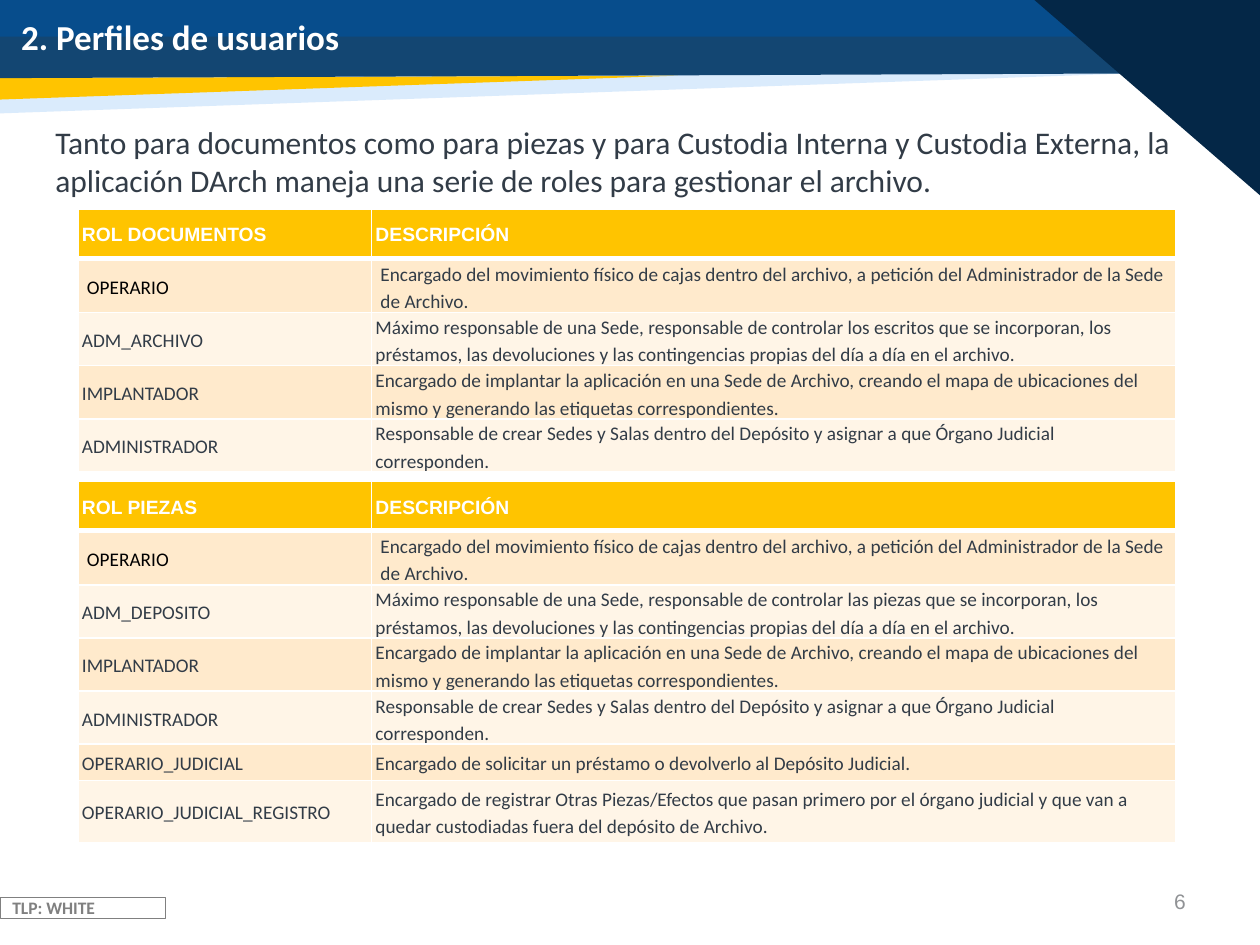
import dataclasses
import typing

import pptx
import pptx.dml.color
import pptx.enum.shapes
import pptx.enum.text
import pptx.oxml
import pptx.oxml.ns
import pptx.util
from pptx.util import Inches, Pt

ALIGN = pptx.enum.text.PP_ALIGN
MIDDLE = pptx.enum.text.MSO_ANCHOR.MIDDLE
WHITE, GOLD, INK, GREY = "FFFFFF", "FFC400", "323C47", "808080"
BANDS = ("FFEACC", "FFF5E7")
Point = tuple[float, float]


@dataclasses.dataclass
class Font:
    size: float
    color: str
    bold: bool = False
    name: str = "Calibri"


@dataclasses.dataclass
class Outline:
    points: list[Point]
    color: str
    alpha: int = 100


@dataclasses.dataclass
class Label:
    box: tuple[float, float, float, float]
    text: str
    font: Font
    align: typing.Any = ALIGN.LEFT
    anchor: typing.Any = pptx.enum.text.MSO_ANCHOR.TOP


@dataclasses.dataclass
class Role:
    name: str
    task: str
    height: float


@dataclasses.dataclass
class Grid:
    title: str
    top: float
    align: typing.Any
    roles: list[Role]


HEAD = Font(11, WHITE, True, "Arial")
BODY = Font(11, INK)
FIRST = Font(11, "000000")

BANNER = [
    Outline([(0, 0.62), (9.05, 0.58), (0, 0.9)], "CDE4FB", 72),
    Outline([(5.38, 0.6), (0, 0.79), (0, 0.62)], GOLD),
    Outline([(0, 0), (9.84, 0), (9.75, 0.58), (0, 0.62)], "053B6A", 94),
    Outline([(9.84, 0), (9.8, 0.29), (0, 0.29), (0, 0)], "074E8E", 94),
    Outline([(8.21, 0), (10, 0), (10, 1.55)], "042747"),
]

LABELS = [
    Label((0, 7.07, 1.31, 0.27), "TLP: WHITE", Font(10, GREY, True)),
    Label((0.07, 0, 9.7, 0.58), "2. Perfiles de usuarios",
          Font(20, WHITE, True), anchor=MIDDLE),
    Label((6.98, 6.95, 2.53, 0.4), "6", Font(12, "909295", name="Arial"),
          ALIGN.RIGHT, MIDDLE),
    Label((0.34, 0.93, 9.15, 0.71),
          "Tanto para documentos como para piezas y para Custodia Interna y Custodia "
          "Externa, la aplicación DArch maneja una serie de roles para gestionar el "
          "archivo.", Font(18, INK)),
]

WORKER = Role("OPERARIO", "Encargado del movimiento físico de cajas dentro del archivo, "
              "a petición del Administrador de la Sede de Archivo.", 0.29)
SETUP = Role("IMPLANTADOR", "Encargado de implantar la aplicación en una Sede de Archivo, "
             "creando el mapa de ubicaciones del mismo y generando las etiquetas "
             "correspondientes.", 0.39)
ADMIN = Role("ADMINISTRADOR", "Responsable de crear Sedes y Salas dentro del Depósito y "
             "asignar a que Órgano Judicial corresponden.", 0.38)


def manager(name: str, items: str, height: float) -> Role:
    return Role(name, f"Máximo responsable de una Sede, responsable de controlar {items} "
                "que se incorporan, los préstamos, las devoluciones y las contingencias "
                "propias del día a día en el archivo.", height)


GRIDS = [
    Grid("ROL DOCUMENTOS", 1.66, ALIGN.JUSTIFY, [
        WORKER, manager("ADM_ARCHIVO", "los escritos", 0.42), SETUP, ADMIN]),
    Grid("ROL PIEZAS", 3.82, ALIGN.LEFT, [
        WORKER, manager("ADM_DEPOSITO", "las piezas", 0.37), SETUP, ADMIN,
        Role("OPERARIO_JUDICIAL", "Encargado de solicitar un préstamo o devolverlo al "
             "Depósito Judicial.", 0.29),
        Role("OPERARIO_JUDICIAL_REGISTRO", "Encargado de registrar Otras Piezas/Efectos "
             "que pasan primero por el órgano judicial y que van a quedar custodiadas "
             "fuera del depósito de Archivo.", 0.49)]),
]


def paint(fill, color: str) -> None:
    fill.solid()
    fill.fore_color.rgb = pptx.dml.color.RGBColor.from_string(color)


def write(frame, text: str, font: Font, align):
    para = frame.paragraphs[0]
    para.alignment = align
    run = para.add_run()
    run.text = text
    run.font.name = font.name
    run.font.size = Pt(font.size)
    run.font.bold = font.bold
    paint(run.font.fill, font.color)
    return para


def draw_shape(slide, outline: Outline) -> None:
    first, *rest = [(Inches(x), Inches(y)) for x, y in outline.points]
    pen = slide.shapes.build_freeform(*first)
    pen.add_line_segments(rest)
    shape = pen.convert_to_shape()
    shape.shadow.inherit = False
    shape.line.fill.background()
    paint(shape.fill, outline.color)
    if outline.alpha < 100:
        tone = shape.fill._xPr.find(".//" + pptx.oxml.ns.qn("a:srgbClr"))
        tone.append(pptx.oxml.parse_xml(
            f'<a:alpha {pptx.oxml.ns.nsdecls("a")} val="{outline.alpha * 1000}"/>'))


def draw_frame(slide) -> None:
    """Draw the outlined box behind the TLP mark."""
    shape = slide.shapes.add_shape(pptx.enum.shapes.MSO_SHAPE.RECTANGLE,
                                   Inches(0), Inches(7.12), Inches(1.31), Inches(0.17))
    shape.shadow.inherit = False
    paint(shape.fill, WHITE)
    paint(shape.line.fill, GREY)
    shape.line.width = Pt(0.25)


def draw_label(slide, label: Label) -> None:
    frame = slide.shapes.add_textbox(*map(Inches, label.box)).text_frame
    frame.word_wrap = True
    frame.vertical_anchor = label.anchor
    write(frame, label.text, label.font, label.align)


def draw_cell(cell, text: str, font: Font, align, fill: str, row: int) -> None:
    props = cell._tc.get_or_add_tcPr()
    widths = {"L": 1, "R": 1, "T": 3 if row == 1 else 1, "B": 3 if row == 0 else 1}
    for side, width in widths.items():
        props.append(pptx.oxml.parse_xml(
            f'<a:ln{side} {pptx.oxml.ns.nsdecls("a")} w="{Pt(width)}"><a:solidFill>'
            f'<a:srgbClr val="{WHITE}"/></a:solidFill></a:ln{side}>'))
    paint(cell.fill, fill)
    cell.vertical_anchor = MIDDLE
    cell.margin_left = cell.margin_right = Inches(0.07 if row == 1 else 0.03)
    cell.margin_top = Inches(0.01 if row == 1 else 0)
    cell.margin_bottom = Inches(0)
    para = write(cell.text_frame, text, font, align)
    para.line_spacing = 1.15
    para.space_after = Pt(8)


def draw_grid(slide, grid: Grid) -> None:
    rows = [Role(grid.title, "DESCRIPCIÓN", 0.39), *grid.roles]
    table = slide.shapes.add_table(
        len(rows), 2, Inches(0.62), Inches(grid.top), Inches(8.71),
        Inches(sum(role.height for role in rows))).table
    for column, width in zip(table.columns, (2.33, 6.38)):
        column.width = Inches(width)
    for row, role in enumerate(rows):
        table.rows[row].height = Inches(role.height)
        fill = BANDS[(row - 1) % 2] if row else GOLD
        font = BODY if row else HEAD
        draw_cell(table.cell(row, 0), role.name, FIRST if row == 1 else font,
                  grid.align if row else ALIGN.JUSTIFY, fill, row)
        draw_cell(table.cell(row, 1), role.task, font,
                  ALIGN.LEFT if row else ALIGN.JUSTIFY, fill, row)


def main() -> None:
    deck = pptx.Presentation()
    deck.slide_width, deck.slide_height = Inches(10), Inches(7.5)
    slide = deck.slides.add_slide(deck.slide_layouts[6])
    for outline in BANNER:
        draw_shape(slide, outline)
    draw_frame(slide)
    for label in LABELS:
        draw_label(slide, label)
    for grid in GRIDS:
        draw_grid(slide, grid)
    deck.save("out.pptx")


if __name__ == "__main__":
    main()
